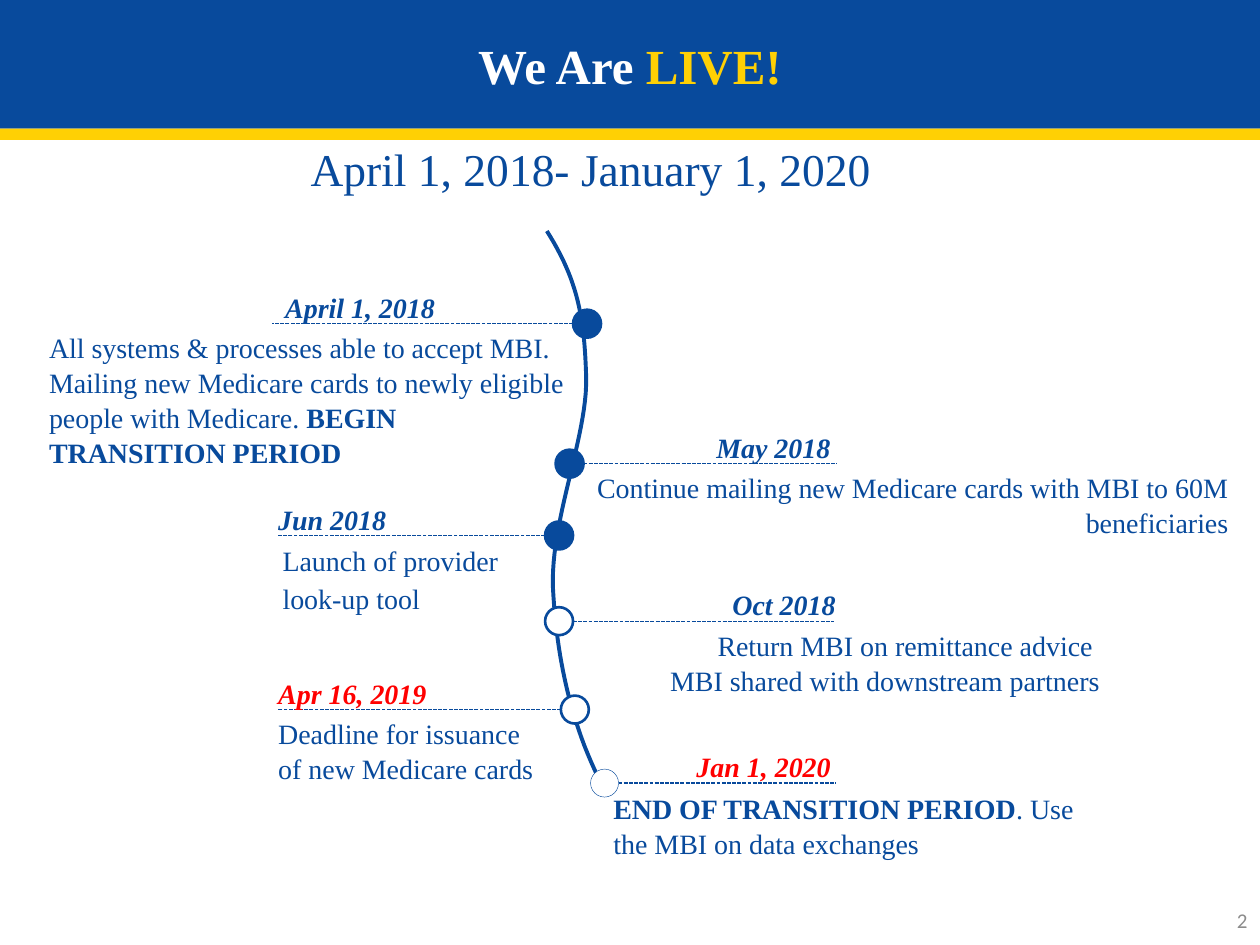
from dataclasses import dataclass

from lxml import etree
from pptx import Presentation
from pptx.dml.color import RGBColor
from pptx.enum import dml, shapes, text
from pptx.oxml.ns import qn
from pptx.util import Pt

COLORS = {"blue": "084A9C", "gold": "FFD004", "white": "FFFFFF",
          "red": "FF0000", "gray": "8C8C8C"}
SERIF = "Times New Roman"
LEFT, CENTER, RIGHT = text.PP_ALIGN.LEFT, text.PP_ALIGN.CENTER, text.PP_ALIGN.RIGHT
NODE = 16
LABEL_H = 22
CURVE_START = (312.5, 132)
CURVE = [((330.5, 160.5), (334, 182), (335, 216)),
         ((335.5, 250), (314.5, 297.5), (316, 336)),
         ((318, 375), (326, 413.5), (344, 448.5))]


@dataclass
class Event:
    date: str
    node: tuple        # centre of the marker
    line_end: float
    label: tuple       # left, width
    body: tuple        # left, top, width, height
    paragraphs: list   # each a list of (text, bold) runs
    align: int = LEFT
    body_align: int = LEFT
    color: str = "blue"
    done: bool = False
    outline: float = 1.5
    space_after: float = 0


EVENTS = [
    Event("April 1, 2018", (335.5, 185), 155.5, (163, 167), (28, 185, 297.5, 80.5),
          [[("All systems & processes able to accept MBI. Mailing new Medicare cards "
             "to newly eligible people with Medicare. ", False),
            ("BEGIN TRANSITION PERIOD", True)]], done=True),
    Event("May 2018", (325.5, 265), 478, (393, 81.5), (339, 265, 363, 42),
          [[("Continue mailing new Medicare cards with MBI to 60M beneficiaries", False)]],
          align=RIGHT, body_align=RIGHT, done=True),
    Event("Jun 2018", (319.5, 306), 159, (159, 85), (161.5, 307, 161, 65),
          [[("Launch of provider", False)], [("look-up tool", False)]],
          done=True, space_after=1.5),
    Event("Oct 2018", (319.5, 355), 476.5, (415.5, 62), (337, 355.5, 291.5, 42),
          [[("Return MBI on remittance advice ", False)],
           [("MBI shared with downstream partners", False)]],
          align=RIGHT, body_align=RIGHT),
    Event("Apr 16, 2019", (328.5, 405.5), 159, (159, 107), (159, 405.5, 152, 42),
          [[("Deadline for issuance of new Medicare cards", False)]], color="red"),
    Event("Jan 1, 2020", (345.5, 447.5), 477.5, (398, 81), (350.5, 448.5, 278.5, 42),
          [[("END OF TRANSITION PERIOD", True),
            (". Use the MBI on data exchanges", False)]], color="red", outline=0.25),
]


def rgb(name):
    return RGBColor.from_string(COLORS[name])


def set_font(font, size, color, name=SERIF, bold=False, italic=False):
    font.name, font.size, font.bold, font.italic = name, Pt(size), bold, italic
    font.color.rgb = rgb(color)


def set_frame(tf, wrap=True, top=0, bottom=0):
    tf.margin_left = tf.margin_right = 0
    tf.margin_top, tf.margin_bottom = Pt(top), Pt(bottom)
    tf.word_wrap = wrap
    tf.auto_size = text.MSO_AUTO_SIZE.NONE


def add_text(s, box, paragraphs, size=16, color="blue", align=LEFT, italic=False,
             wrap=True, top=0, spacing=1.0, after=0):
    tf = s.shapes.add_textbox(*map(Pt, box)).text_frame
    set_frame(tf, wrap, top)
    for i, runs in enumerate(paragraphs):
        p = tf.add_paragraph() if i else tf.paragraphs[0]
        p.alignment, p.line_spacing, p.space_after = align, spacing, Pt(after)
        set_font(p.font, size, color, italic=italic)
        for content, bold in runs:
            r = p.add_run()
            r.text, r.font.bold = content, bold
    return tf


def add_shape(s, kind, box, fill, outline=None):
    sp = s.shapes.add_shape(kind, *map(Pt, box))
    sp.shadow.inherit = False
    sp.fill.solid()
    sp.fill.fore_color.rgb = rgb(fill)
    if outline:
        sp.line.color.rgb, sp.line.width = rgb("blue"), Pt(outline)
    else:
        sp.line.fill.background()
    return sp


def add_header(s):
    title = s.shapes.title
    for box, fill in (((-1.5, 0, 724.5, 73.5), "blue"), ((0, 73.5, 724.5, 6.5), "gold")):
        bar = add_shape(s, shapes.MSO_SHAPE.RECTANGLE, box, fill)
        title.element.addprevious(bar.element)
    title.left, title.top, title.width, title.height = map(Pt, (0, 20, 720, 34))
    tf = title.text_frame
    set_frame(tf)
    tf.vertical_anchor = text.MSO_ANCHOR.MIDDLE
    p = tf.paragraphs[0]
    p.alignment = CENTER
    for content, color in (("We Are ", "white"), ("LIVE!", "gold")):
        r = p.add_run()
        r.text = content
        set_font(r.font, 28, color, bold=True)
    add_text(s, (177.5, 80.5, 324, 34), [[("April 1, 2018- January 1, 2020", False)]],
             size=26, wrap=False)


def add_curve(s, steps=24):
    """Draw the timeline as sampled cubic Bezier segments."""
    points, start = [], CURVE_START
    for c1, c2, end in CURVE:
        for i in range(1, steps + 1):
            t = i / steps
            weights = ((1 - t) ** 3, 3 * t * (1 - t) ** 2, 3 * t * t * (1 - t), t ** 3)
            points.append(tuple(Pt(sum(w * v for w, v in zip(weights, axis)))
                                for axis in zip(start, c1, c2, end)))
        start = end
    builder = s.shapes.build_freeform(*map(Pt, CURVE_START))
    builder.add_line_segments(points, close=False)
    sp = builder.convert_to_shape()
    sp.shadow.inherit = False
    sp.fill.background()
    sp.line.color.rgb, sp.line.width = rgb("blue"), Pt(2.25)


def add_leader(s, x1, x2, y):
    line = s.shapes.add_connector(shapes.MSO_CONNECTOR.STRAIGHT,
                                  *map(Pt, (x1, y, x2, y)))
    line.line.color.rgb, line.line.width = rgb("blue"), Pt(0.75)
    line.line.dash_style = dml.MSO_LINE.SQUARE_DOT
    etree.SubElement(line.element.spPr, qn("a:effectLst"))


def add_event(s, e):
    x, y = e.node
    half = NODE / 2
    add_shape(s, shapes.MSO_SHAPE.OVAL, (x - half, y - half, NODE, NODE),
              "blue" if e.done else "white", e.outline)
    add_leader(s, x + half if e.line_end > x else x - half, e.line_end, y)
    left, width = e.label
    add_text(s, (left, y - 19, width, LABEL_H), [[(e.date, True)]],
             color=e.color, align=e.align, italic=True)
    add_text(s, e.body, e.paragraphs, align=e.body_align, top=3,
             spacing=1.04, after=e.space_after)


def add_slide_number(s):
    tf = s.shapes.add_textbox(*map(Pt, (552, 511, 168, 29))).text_frame
    tf.vertical_anchor = text.MSO_ANCHOR.MIDDLE
    tf.word_wrap = True
    p = tf.paragraphs[0]
    p.alignment = RIGHT
    r = p.add_run()
    r.text = "2"
    set_font(r.font, 12, "gray", name="Calibri")


def main():
    prs = Presentation()
    prs.slide_width, prs.slide_height = Pt(720), Pt(540)
    s = prs.slides.add_slide(prs.slide_layouts[5])
    add_header(s)
    add_curve(s)
    for event in EVENTS:
        add_event(s, event)
    add_slide_number(s)
    prs.save("out.pptx")


if __name__ == "__main__":
    main()
